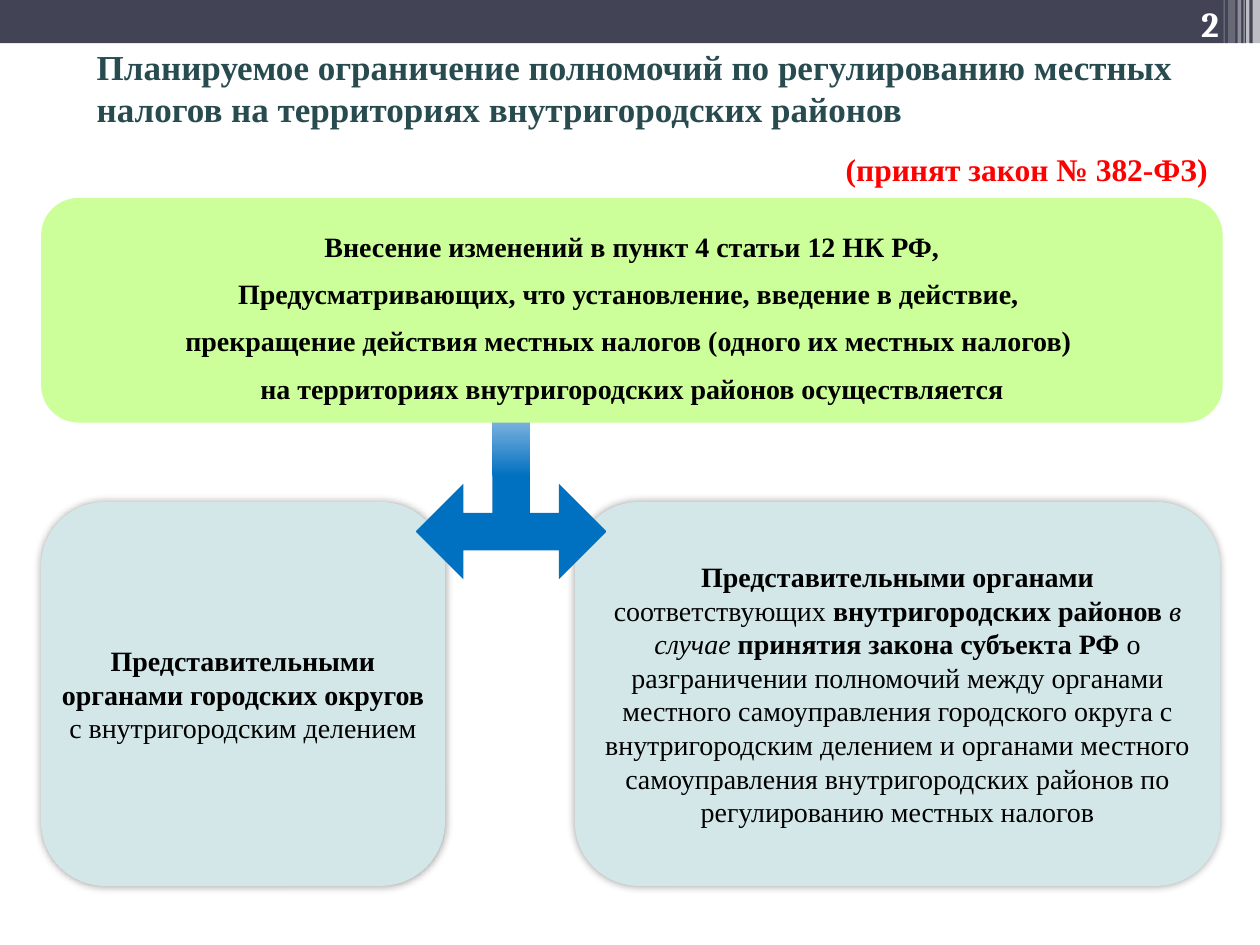
from dataclasses import dataclass

from lxml.etree import SubElement as Sub
from pptx import Presentation
from pptx.dml.color import RGBColor as RGB
from pptx.enum.shapes import MSO_SHAPE as Shape
from pptx.enum.text import MSO_ANCHOR as Anchor, PP_ALIGN as Align
from pptx.oxml.ns import qn
from pptx.util import Cm, Pt


@dataclass(frozen=True)
class Theme:
    bar: str = "424456"
    white: str = "FFFFFF"
    black: str = "000000"
    title: str = "274B4F"
    red: str = "FF0000"
    lime: str = "CCFF99"
    pale: str = "D3E7E9"
    blue: str = "0070C0"
    haze: str = "DEE6F7"
    serif: str = "Times New Roman"
    digit: str = "Cambria"
    head: int = 20
    note: int = 18
    body: int = 16


class Deck:
    def __init__(self, theme):
        self.theme = theme
        self.prs = Presentation()
        self.prs.slide_width, self.prs.slide_height = Cm(25.4), Cm(19.05)
        self.slide = self.prs.slides.add_slide(self.prs.slide_layouts[6])

    def shape(self, kind, box, fill=None, alpha=None):
        item = self.slide.shapes.add_shape(kind, *map(Cm, box))
        item.shadow.inherit = False
        item.line.fill.background()
        if fill:
            item.fill.solid()
            item.fill.fore_color.rgb = RGB.from_string(fill)
        if alpha is not None:
            color = item._element.spPr.find(".//" + qn("a:srgbClr"))
            Sub(color, qn("a:alpha"), val=str(alpha * 1000))
        return item

    def glow(self, item, blur=5, alpha=40):
        effects = item._element.spPr.find(qn("a:effectLst"))
        shade = Sub(effects, qn("a:outerShdw"), blurRad=str(Pt(blur)),
                    dist="0", dir="0", algn="ctr", rotWithShape="0")
        color = Sub(shade, qn("a:srgbClr"), val=self.theme.black)
        Sub(color, qn("a:alpha"), val=str(alpha * 1000))

    def panel(self, box, fill):
        return self.shape(Shape.ROUNDED_RECTANGLE, box, fill)

    def arrow(self, box, adjust, stops):
        item = self.shape(Shape.LEFT_RIGHT_UP_ARROW, box)
        for i, value in enumerate(adjust):
            item.adjustments[i] = value
        item.fill.gradient()
        item.fill.gradient_angle = 90
        for stop, (place, color) in zip(item.fill.gradient_stops, stops):
            stop.position = place
            stop.color.rgb = RGB.from_string(color)

    def label(self, box, text, size, color, **style):
        item = self.slide.shapes.add_textbox(*map(Cm, box))
        self.words(item, [[(text, "b")]], size, color, **style)

    def words(self, item, paras, size, color, font=None, align=Align.CENTER,
              anchor=Anchor.MIDDLE, after=0, lead=None, side=0.25):
        """Each paragraph is a list of (text, marks); marks hold b and i."""
        frame = item.text_frame
        frame.word_wrap = True
        frame.vertical_anchor = anchor
        frame.margin_left = frame.margin_right = Cm(side)
        for i, runs in enumerate(paras):
            para = frame.add_paragraph() if i else frame.paragraphs[0]
            para.alignment = align
            para.space_after = Pt(after)
            if lead:
                para.line_spacing = Pt(lead)
            for text, marks in runs:
                for j, line in enumerate(text.split("\n")):
                    if j:
                        para.add_line_break()
                    run = para.add_run()
                    run.text = line
                    run.font.name = font or self.theme.serif
                    run.font.size = Pt(size)
                    run.font.bold = "b" in marks
                    run.font.italic = "i" in marks
                    run.font.color.rgb = RGB.from_string(color)


def main():
    t = Theme()
    deck = Deck(t)

    # Top bar with its translucent stripes: left, width, height, opacity
    deck.shape(Shape.RECTANGLE, (0, 0, 25.4, 0.87), t.bar)
    for left, width, high, alpha in (
            (25.25, 0.15, 1.73, 65), (25.12, 0.07, 1.73, 65),
            (25.07, 0.02, 1.73, 60), (24.95, 0.07, 1.73, 40),
            (24.76, 0.14, 1.63, 20), (24.67, 0.02, 1.63, 30)):
        deck.shape(Shape.RECTANGLE, (left, 0, width, high), t.white, alpha)

    # Title
    deck.label((1.7, 0.79, 22.4, 1.96),
               "Планируемое ограничение полномочий по регулированию местных "
               "налогов на территориях внутригородских районов",
               t.head, t.title, align=Align.LEFT)

    # Two outcome panels: left, width, runs
    city = [("Представительными органами городских округов ", "b"),
            ("с внутригородским делением", "")]
    area = [("Представительными органами ", "b"),
            ("соответствующих ", ""),
            ("внутригородских районов ", "b"),
            ("в случае ", "i"),
            ("принятия закона субъекта РФ ", "b"),
            ("о разграничении полномочий между органами местного "
             "самоуправления городского округа с внутригородским делением "
             "и органами местного самоуправления внутригородских районов "
             "по регулированию местных налогов", "")]
    for left, width, runs in ((0.83, 8.14, city), (11.59, 13.01, area)):
        item = deck.panel((left, 10.12, width, 7.74), t.pale)
        deck.glow(item)
        deck.words(item, [runs], t.body, t.black, after=6, side=0)

    # Arrow, partly behind the amendment panel
    deck.arrow((8.38, 5.77, 3.85, 5.91), (0.196, 0.25, 0.25),
               ((0.35, t.blue), (0.69, t.haze)))

    # Amendment panel
    item = deck.panel((0.83, 3.99, 23.82, 4.53), t.lime)
    deck.words(item, [
        [("Внесение изменений в пункт 4 статьи 12 НК РФ,", "b")],
        [("Предусматривающих, что установление, введение в действие, \n"
          "прекращение действия местных налогов (одного их местных налогов) \n"
          "на территориях внутригородских районов осуществляется", "b")],
    ], t.body, t.black, lead=27)

    # Law note and page number
    deck.label((14.88, 2.9, 9.72, 1.02), "(принят закон № 382-ФЗ)",
               t.note, t.red, align=Align.RIGHT, anchor=Anchor.TOP)
    deck.label((21.9, 0, 2.92, 1.02), "2", t.head, t.white, font=t.digit,
               align=Align.RIGHT, anchor=Anchor.BOTTOM)

    deck.prs.save("out.pptx")


if __name__ == "__main__":
    main()
